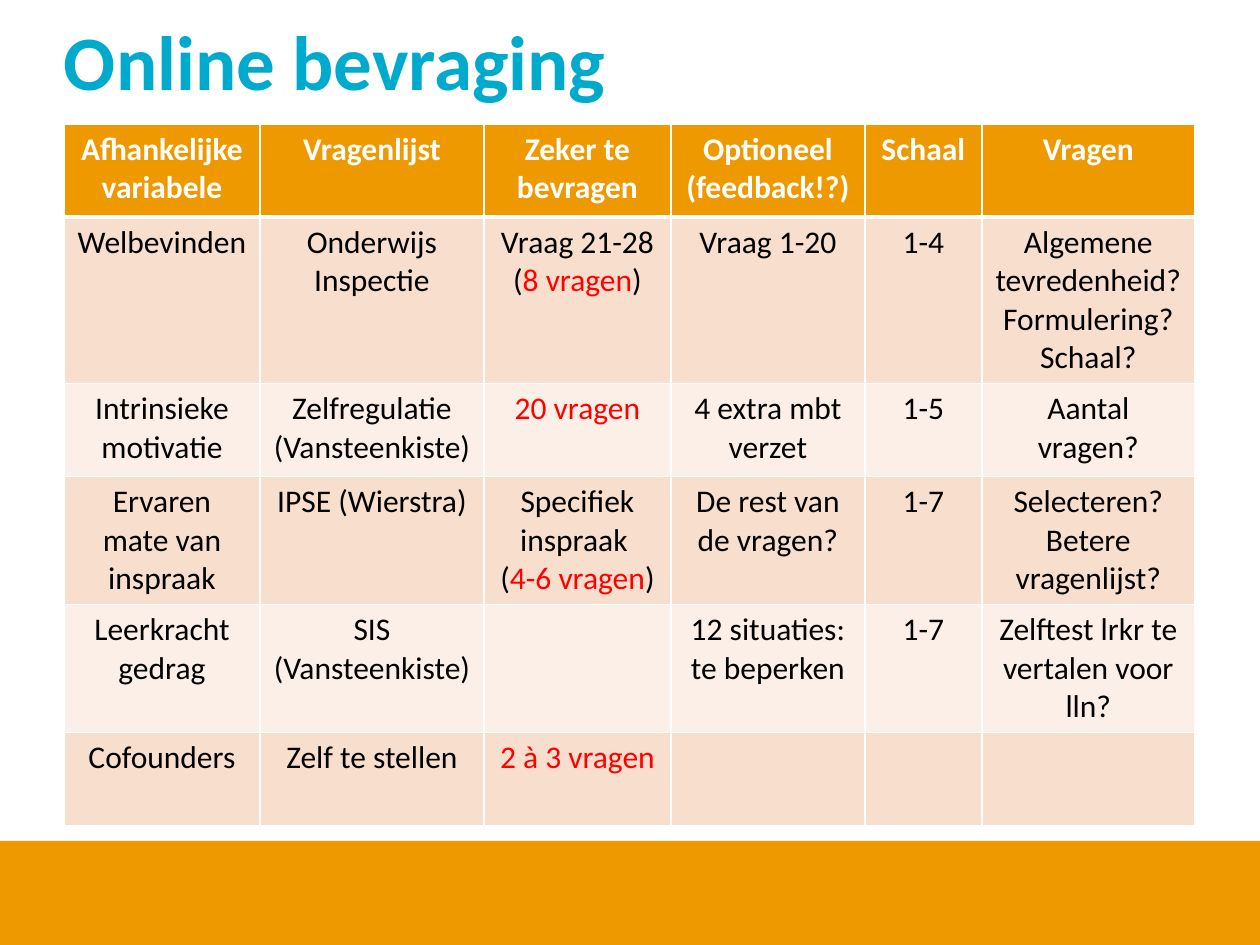
from lxml.etree import SubElement
from pptx import Presentation
from pptx.dml.color import RGBColor
from pptx.enum.shapes import MSO_SHAPE as Shape
from pptx.enum.text import MSO_ANCHOR as Anchor, MSO_AUTO_SIZE as AutoSize, PP_ALIGN as Align
from pptx.oxml.ns import qn
from pptx.util import Pt

PX = 914400 / 126
COLORS = {
    "orange": "EE9900",
    "blue": "00AACC",
    "white": "FFFFFF",
    "black": "000000",
    "red": "FF0000",
    "dark band": "F8DECC",
    "light band": "FCEFE7",
}
TITLE_FORMAT = {"name": "Calibri", "size": Pt(44), "bold": True}
HEADER_FORMAT = {"name": "Calibri", "size": Pt(18), "bold": True}
BODY_FORMAT = {"name": "Calibri", "size": Pt(18), "bold": False}
COLUMN_WIDTHS = [196, 224, 187, 194, 117, 213]
ROW_HEIGHT = 93
# Asterisks enclose the words set in red.
ROWS = [
    ["Afhankelijke variabele", "Vragenlijst", "Zeker te bevragen",
     "Optioneel (feedback!?)", "Schaal", "Vragen"],
    ["Welbevinden", "Onderwijs\nInspectie", "Vraag 21-28\n(*8 vragen*)",
     "Vraag 1-20", "1-4", "Algemene tevredenheid?\nFormulering?\nSchaal?"],
    ["Intrinsieke motivatie", "Zelfregulatie\n(Vansteenkiste)", "*20 vragen*",
     "4 extra mbt verzet", "1-5", "Aantal vragen?"],
    ["Ervaren mate van inspraak", "IPSE (Wierstra)", "Specifiek inspraak \n(*4-6 vragen*)",
     "De rest van de vragen?", "1-7", "Selecteren?\nBetere vragenlijst?"],
    ["Leerkracht\ngedrag", "SIS (Vansteenkiste)", "",
     "12 situaties: te beperken", "1-7", "Zelftest lrkr te vertalen voor lln?"],
    ["Cofounders", "Zelf te stellen", "*2 à 3 vragen*", "", "", ""],
]


def px(*lengths):
    return [round(length * PX) for length in lengths]


def format_font(font, values, color):
    for attribute, value in values.items():
        setattr(font, attribute, value)
    font.color.rgb = RGBColor.from_string(COLORS[color])


presentation = Presentation()
presentation.slide_width, presentation.slide_height = px(1260, 945)
slide = presentation.slides.add_slide(presentation.slide_layouts[5])

footer_band = slide.shapes.add_shape(Shape.RECTANGLE, *px(0, 841, 1260, 104))
footer_band.shadow.inherit = False
footer_band.fill.solid()
footer_band.fill.fore_color.rgb = RGBColor.from_string(COLORS["orange"])
footer_band.line.fill.background()

title = slide.shapes.title
title.left, title.top, title.width, title.height = px(64, -50, 1132, 157)
frame = title.text_frame
frame_format = {
    "margin_left": 0, "margin_top": 0, "margin_right": 0, "margin_bottom": 0,
    "vertical_anchor": Anchor.BOTTOM, "word_wrap": True, "auto_size": AutoSize.NONE,
}
for attribute, value in frame_format.items():
    setattr(frame, attribute, value)
paragraph = frame.paragraphs[0]
paragraph.alignment = Align.LEFT
paragraph.line_spacing = 0.9
run = paragraph.add_run()
run.text = "Online bevraging"
format_font(run.font, TITLE_FORMAT, "blue")

table_box = px(64, 124, sum(COLUMN_WIDTHS), ROW_HEIGHT * len(ROWS))
table = slide.shapes.add_table(len(ROWS), len(COLUMN_WIDTHS), *table_box).table
for column, width in zip(table.columns, COLUMN_WIDTHS):
    column.width = px(width)[0]
for row in table.rows:
    row.height = px(ROW_HEIGHT)[0]

for row_index, texts in enumerate(ROWS):
    is_header = row_index == 0
    values = HEADER_FORMAT if is_header else BODY_FORMAT
    text_color = "white" if is_header else "black"
    band = "orange" if is_header else "dark band" if row_index % 2 else "light band"
    border_widths = {
        "a:lnL": 1, "a:lnR": 1,
        "a:lnT": 3 if row_index == 1 else 1,
        "a:lnB": 3 if is_header else 1,
    }
    for column_index, text in enumerate(texts):
        cell = table.cell(row_index, column_index)
        properties = cell._tc.get_or_add_tcPr()
        for tag, width in border_widths.items():
            border = SubElement(properties, qn(tag), w=str(Pt(width)))
            border_fill = SubElement(border, qn("a:solidFill"))
            SubElement(border_fill, qn("a:srgbClr"), val=COLORS["white"])
        cell.fill.solid()
        cell.fill.fore_color.rgb = RGBColor.from_string(COLORS[band])
        for line_index, line in enumerate(text.split("\n")):
            frame = cell.text_frame
            paragraph = frame.add_paragraph() if line_index else frame.paragraphs[0]
            paragraph.alignment = Align.CENTER
            for part_index, part in enumerate(line.split("*")):
                if part:
                    run = paragraph.add_run()
                    run.text = part
                    format_font(run.font, values, "red" if part_index % 2 else text_color)

presentation.save("out.pptx")
